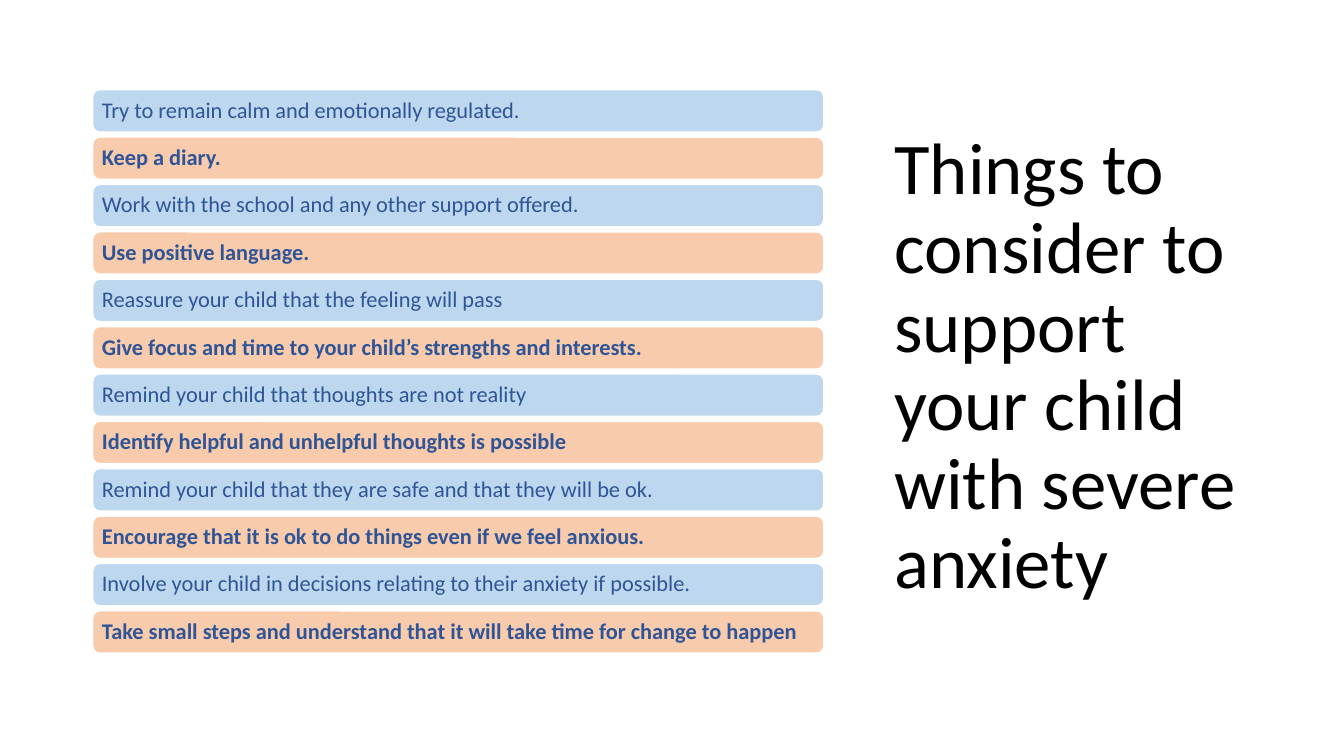
import pptx
import pptx.util
import pptx.dml.color
import pptx.enum.shapes
import pptx.enum.text

Inches, Pt = pptx.util.Inches, pptx.util.Pt

HEADING = "Things to consider to support your child with severe anxiety"
TIPS = [
    "Try to remain calm and emotionally regulated.",
    "Keep a diary.",
    "Work with the school and any other support offered.",
    "Use positive language.",
    "Reassure your child that the feeling will pass",
    "Give focus and time to your child’s strengths and interests.",
    "Remind your child that thoughts are not reality",
    "Identify helpful and unhelpful thoughts is possible",
    "Remind your child that they are safe and that they will be ok.",
    "Encourage that it is ok to do things even if we feel anxious.",
    "Involve your child in decisions relating to their anxiety if possible.",
    "Take small steps and understand that it will take time for change to happen",
]
COLORS = {"plain": "BDD7EE", "strong": "F8CBAD", "tip": "2F5597",
          "heading": "000000", "outline": "FFFFFF"}
FONT = "Calibri"

# Inches
SLIDE_WIDTH, SLIDE_HEIGHT = 13.33, 7.5
HEADING_BOX = (8.77, 0.6, 3.65, 6.1)
BAR_LEFT, BAR_TOP, BAR_WIDTH, BAR_HEIGHT = 0.92, 0.89, 7.25, 0.42
BAR_PITCH = 0.47
BAR_INSET = 0.07


def color(name):
    return pptx.dml.color.RGBColor.from_string(COLORS[name])


def write(frame, text, size, ink, bold=False):
    """Fill a frame with one left-aligned, vertically centred paragraph."""
    frame.word_wrap = True
    frame.auto_size = pptx.enum.text.MSO_AUTO_SIZE.NONE
    frame.vertical_anchor = pptx.enum.text.MSO_ANCHOR.MIDDLE
    paragraph = frame.paragraphs[0]
    paragraph.alignment = pptx.enum.text.PP_ALIGN.LEFT
    paragraph.line_spacing = 0.9
    run = paragraph.add_run()
    run.text = text
    run.font.name = FONT
    run.font.size = Pt(size)
    run.font.bold = bold
    run.font.color.rgb = color(ink)


def add_tip(slide, row, tip):
    strong = row % 2 == 1
    bar = slide.shapes.add_shape(
        pptx.enum.shapes.MSO_SHAPE.ROUNDED_RECTANGLE,
        Inches(BAR_LEFT), Inches(BAR_TOP + row * BAR_PITCH),
        Inches(BAR_WIDTH), Inches(BAR_HEIGHT))
    bar.shadow.inherit = False
    bar.fill.solid()
    bar.fill.fore_color.rgb = color("strong" if strong else "plain")
    bar.line.color.rgb = color("outline")
    bar.line.width = Pt(1)
    frame = bar.text_frame
    frame.margin_left = frame.margin_right = Inches(BAR_INSET)
    frame.margin_top = frame.margin_bottom = Inches(BAR_INSET)
    write(frame, tip, 16, "tip", strong)


def main():
    deck = pptx.Presentation()
    deck.slide_width = Inches(SLIDE_WIDTH)
    deck.slide_height = Inches(SLIDE_HEIGHT)
    slide = deck.slides.add_slide(deck.slide_layouts.get_by_name("Title Only"))

    heading = slide.shapes.title
    heading.left, heading.top, heading.width, heading.height = map(Inches, HEADING_BOX)
    write(heading.text_frame, HEADING, 52, "heading")

    for row, tip in enumerate(TIPS):
        add_tip(slide, row, tip)

    deck.save("out.pptx")


if __name__ == "__main__":
    main()
